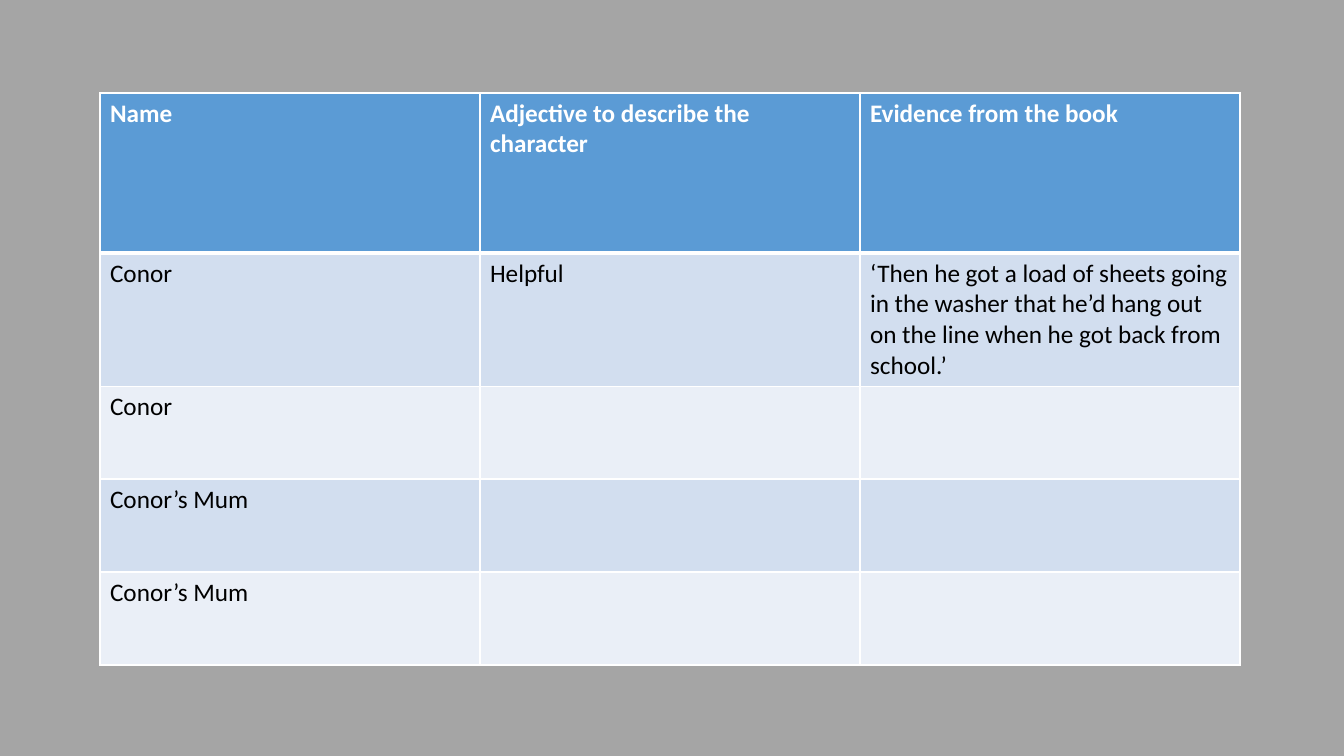
from lxml import etree
from pptx import Presentation
from pptx.dml.color import RGBColor
from pptx.oxml.ns import qn
from pptx.util import Emu, Pt

ROWS = [
    ("Name", "Adjective to describe the character", "Evidence from the book"),
    ("Conor", "Helpful",
     "‘Then he got a load of sheets going in the washer that he’d hang out "
     "on the line when he got back from school.’"),
    ("Conor", "", ""),
    ("Conor’s Mum", "", ""),
    ("Conor’s Mum", "", ""),
]
COLORS = {
    "background": "A5A5A5",
    "header": "5B9BD5",
    "odd": "D2DEEF",
    "even": "EAEFF7",
    "border": "FFFFFF",
    "header_text": "FFFFFF",
    "body_text": "000000",
}
FONT, FONT_SIZE = "Calibri", 18
SLIDE_W, SLIDE_H = 1344, 756
LEFT, TOP, COL_W = 100, 93, 380
HEADER_H, BODY_H, TABLE_H = 160, 93, 571
THIN, THICK = Pt(1), Pt(3)


def px(n):
    return Emu(round(n * 914400 / 100.8))


def rgb(name):
    return RGBColor.from_string(COLORS[name])


def set_borders(cell, top, bottom):
    tcPr = cell._tc.get_or_add_tcPr()
    for side, width in (("L", THIN), ("R", THIN), ("T", top), ("B", bottom)):
        ln = etree.SubElement(tcPr, qn(f"a:ln{side}"), w=str(width))
        fill = etree.SubElement(ln, qn("a:solidFill"))
        etree.SubElement(fill, qn("a:srgbClr"), val=COLORS["border"])


def fill_cell(cell, text, row):
    header = row == 0
    set_borders(cell, THICK if row == 1 else THIN, THICK if header else THIN)
    cell.fill.solid()
    cell.fill.fore_color.rgb = rgb(
        "header" if header else "odd" if row % 2 else "even")
    p = cell.text_frame.paragraphs[0]
    p.font.size = Pt(FONT_SIZE)
    if text:
        r = p.add_run()
        r.text = text
        r.font.name = FONT
        r.font.size = Pt(FONT_SIZE)
        r.font.bold = header
        r.font.color.rgb = rgb("header_text" if header else "body_text")


def main():
    prs = Presentation()
    prs.slide_width, prs.slide_height = px(SLIDE_W), px(SLIDE_H)
    s = prs.slides.add_slide(prs.slide_layouts[6])
    s.background.fill.solid()
    s.background.fill.fore_color.rgb = rgb("background")

    cols = len(ROWS[0])
    frame = s.shapes.add_table(len(ROWS), cols, px(LEFT), px(TOP),
                               px(COL_W * cols), px(TABLE_H))
    table = frame.table
    for column in table.columns:
        column.width = px(COL_W)
    for i, texts in enumerate(ROWS):
        table.rows[i].height = px(BODY_H if i else HEADER_H)
        for j, text in enumerate(texts):
            fill_cell(table.cell(i, j), text, i)
    frame.height = px(TABLE_H)
    prs.save("out.pptx")


if __name__ == "__main__":
    main()
